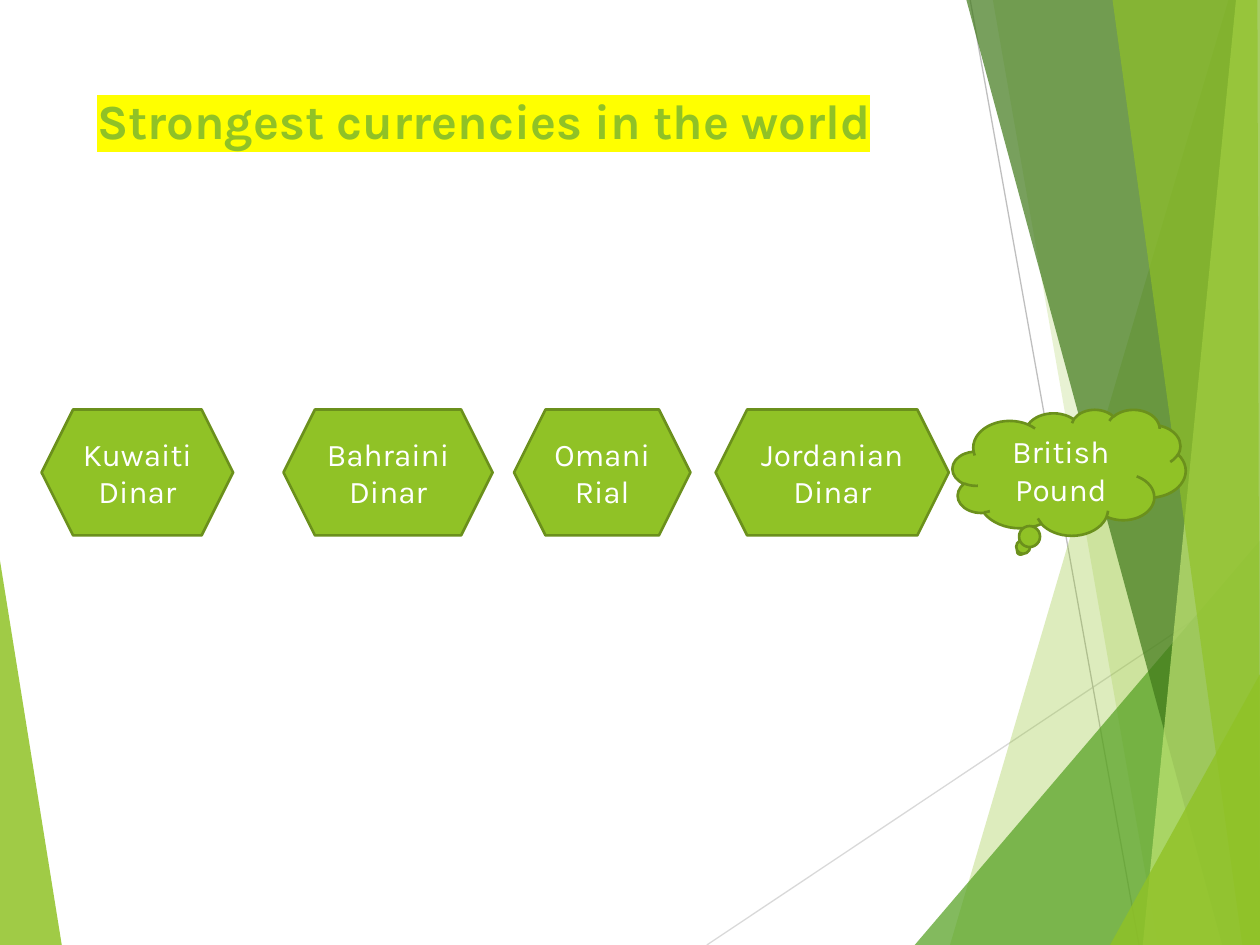
from dataclasses import dataclass

from lxml.etree import SubElement
from pptx import Presentation
from pptx.dml.color import RGBColor
from pptx.enum.shapes import MSO_CONNECTOR, MSO_SHAPE
from pptx.enum.text import MSO_ANCHOR, MSO_AUTO_SIZE, PP_ALIGN
from pptx.oxml import parse_xml
from pptx.oxml.ns import nsdecls, qn
from pptx.util import Inches, Pt


@dataclass(frozen=True)
class Theme:
    font: str = "Karla"
    lime: str = "90C226"
    green: str = "54A021"
    forest: str = "3F7819"
    pale: str = "C0E474"
    outline: str = "6B901C"
    highlight: str = "FFFF00"
    white: str = "FFFFFF"
    light_gray: str = "D9D9D9"
    gray: str = "BFBFBF"
    title_size: int = 28
    label_size: int = 18


THEME = Theme()
WIDTH, HEIGHT = 10, 7.5
BADGE_TOP, BADGE_HEIGHT = 3.25, 1

RAYS = [
    ((5.61, HEIGHT), (WIDTH, 4.57), THEME.light_gray),
    ((7.7, 0), (9.04, HEIGHT), THEME.gray),
]

LEFT_FACET = ([(0, 4.45), (0.49, HEIGHT), (0, HEIGHT)], THEME.lime, 85)
RIGHT_FACETS = [
    ([(9.75, 0), (7.54, HEIGHT), (WIDTH, HEIGHT), (WIDTH, 0)], THEME.lime, 30),
    ([(7.88, 0), (9.19, HEIGHT), (WIDTH, HEIGHT), (WIDTH, 0)], THEME.lime, 20),
    ([(7.26, HEIGHT), (WIDTH, 4.29), (WIDTH, HEIGHT)], THEME.green, 72),
    ([(7.67, 0), (9.7, HEIGHT), (WIDTH, HEIGHT), (WIDTH, 0)], THEME.forest, 70),
    ([(9.81, 0), (9.07, HEIGHT), (WIDTH, HEIGHT), (WIDTH, 0)], THEME.pale, 70),
    ([(8.83, 0), (9.86, HEIGHT), (WIDTH, HEIGHT), (9.98, 0)], THEME.lime, 65),
    ([(8.81, HEIGHT), (WIDTH, 5.35), (WIDTH, HEIGHT)], THEME.lime, 80),
]

CURRENCIES = [
    ("Kuwaiti Dinar", 0.33, 1.52, MSO_SHAPE.HEXAGON),
    ("Bahraini Dinar", 2.25, 1.66, MSO_SHAPE.HEXAGON),
    ("Omani Rial", 4.08, 1.4, MSO_SHAPE.HEXAGON),
    ("Jordanian Dinar", 5.68, 1.85, MSO_SHAPE.HEXAGON),
    ("British Pound", 7.56, 1.85, MSO_SHAPE.CLOUD_CALLOUT),
]


def paint(shape, color):
    shape.shadow.inherit = False
    shape.fill.solid()
    shape.fill.fore_color.rgb = RGBColor.from_string(color)


def style_span(span, size, color, bold=False):
    span.font.name = THEME.font
    span.font.size = Pt(size)
    span.font.bold = bold
    span.font.color.rgb = RGBColor.from_string(color)


def add_facet(page, points, color, opacity):
    corners = [(Inches(x), Inches(y)) for x, y in points]
    builder = page.shapes.build_freeform(*corners[0])
    builder.add_line_segments(corners[1:], close=True)
    facet = builder.convert_to_shape()
    paint(facet, color)
    facet.line.fill.background()
    tint = facet.fill._xPr.find(qn("a:solidFill"))[0]
    SubElement(tint, qn("a:alpha"), val=str(opacity * 1000))


def add_ray(page, start, end, color):
    ends = [Inches(value) for value in (*start, *end)]
    ray = page.shapes.add_connector(MSO_CONNECTOR.STRAIGHT, *ends)
    ray.line.color.rgb = RGBColor.from_string(color)
    ray.line.width = Pt(0.75)
    SubElement(ray._element.spPr, qn("a:effectLst"))


def add_backdrop(page):
    add_facet(page, *LEFT_FACET)
    for ray in RAYS:
        add_ray(page, *ray)
    for facet in RIGHT_FACETS:
        add_facet(page, *facet)


def add_title(page, text):
    title = page.shapes.title
    title.left, title.top = Inches(0.67), Inches(0.67)
    title.width, title.height = Inches(6.94), Inches(1.44)
    frame = title.text_frame
    frame.text = text
    frame.auto_size = MSO_AUTO_SIZE.NONE
    frame.vertical_anchor = MSO_ANCHOR.TOP
    para = frame.paragraphs[0]
    para.alignment = PP_ALIGN.LEFT
    span = para.runs[0]
    style_span(span, THEME.title_size, THEME.lime, bold=True)
    marker = parse_xml(
        f'<a:highlight {nsdecls("a")}><a:srgbClr val="{THEME.highlight}"/></a:highlight>'
    )
    span.font._element.find(qn("a:solidFill")).addnext(marker)
    page.shapes._spTree.append(title._element)


def add_currency(page, name, left, width, outline):
    badge = page.shapes.add_shape(
        outline, Inches(left), Inches(BADGE_TOP), Inches(width), Inches(BADGE_HEIGHT)
    )
    paint(badge, THEME.lime)
    badge.line.color.rgb = RGBColor.from_string(THEME.outline)
    badge.line.width = Pt(1.5)
    frame = badge.text_frame
    frame.text = name
    frame.word_wrap = True
    frame.vertical_anchor = MSO_ANCHOR.MIDDLE
    para = frame.paragraphs[0]
    para.alignment = PP_ALIGN.CENTER
    style_span(para.runs[0], THEME.label_size, THEME.white)


def main():
    deck = Presentation()
    deck.slide_width, deck.slide_height = Inches(WIDTH), Inches(HEIGHT)
    page = deck.slides.add_slide(deck.slide_layouts[5])
    add_backdrop(page)
    add_title(page, "Strongest currencies in the world")
    for currency in CURRENCIES:
        add_currency(page, *currency)
    deck.save("out.pptx")


if __name__ == "__main__":
    main()
